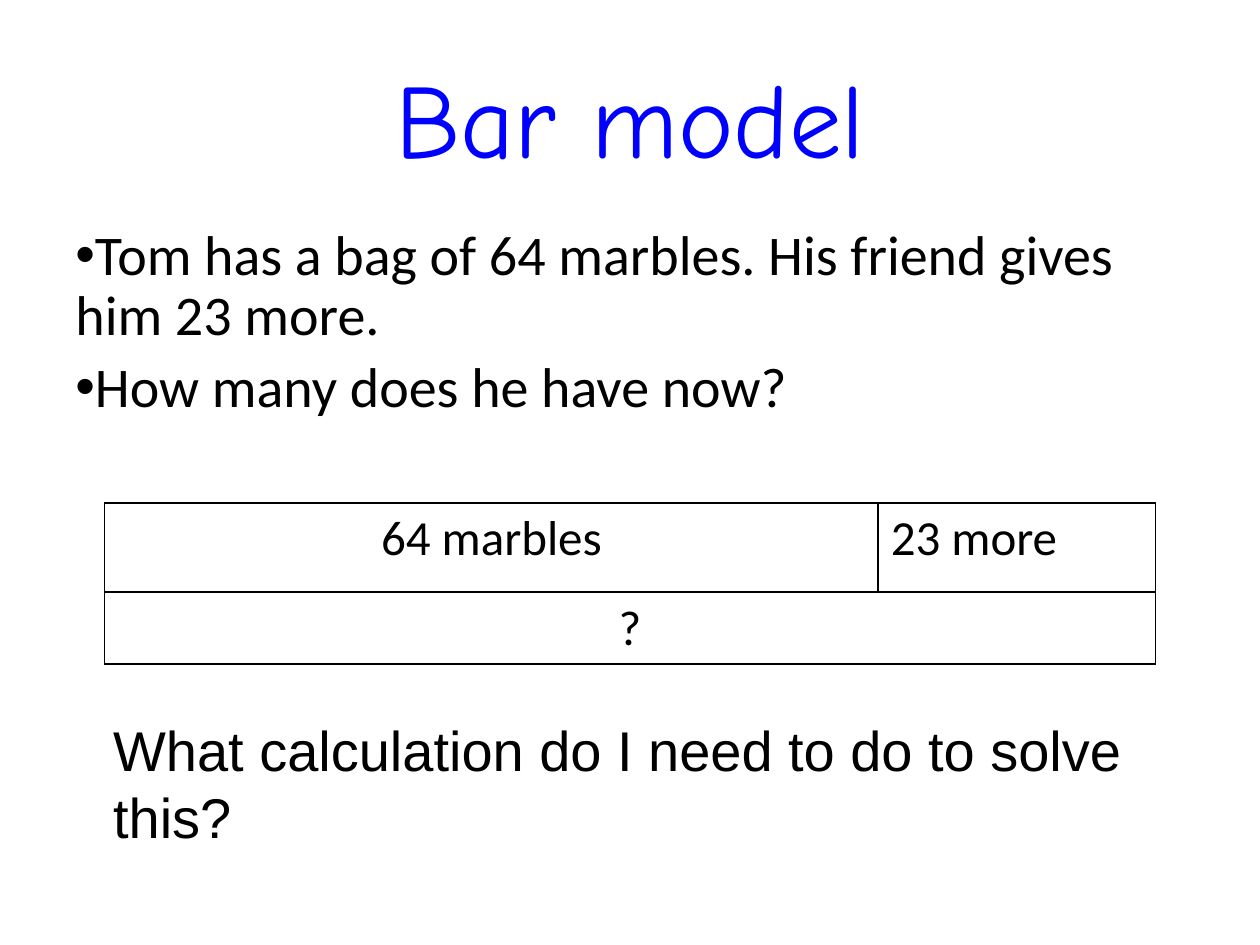
from dataclasses import dataclass

from lxml import etree
from pptx import Presentation
from pptx.dml.color import RGBColor
from pptx.enum.text import MSO_ANCHOR, PP_ALIGN
from pptx.oxml.ns import qn
from pptx.util import Inches, Pt

LEFT, CENTER = PP_ALIGN.LEFT, PP_ALIGN.CENTER
TOP, MIDDLE = MSO_ANCHOR.TOP, MSO_ANCHOR.MIDDLE


@dataclass(frozen=True)
class Theme:
    ink: str = "000000"
    blue: str = "0000FF"
    title: int = 60
    body: int = 32
    cell: int = 28
    line: int = 1
    head_font: str = "Comic Neue"
    body_font: str = "Calibri"
    note_font: str = "Arial"


class Deck:
    def __init__(self, slide, theme):
        self.slide = slide
        self.theme = theme

    def label(self, para, text, font, size, color=None, **form):
        for name, value in form.items():
            setattr(para, name, value)
        run = para.add_run()
        run.text = text
        for name, value in {"name": font, "size": Pt(size)}.items():
            setattr(run.font, name, value)
        run.font.color.rgb = RGBColor.from_string(color or self.theme.ink)

    def text(self, box, lines, font, size, color=None, anchor=TOP,
             bullet=False, **form):
        frame = self.slide.shapes.add_textbox(*map(Inches, box)).text_frame
        frame.word_wrap = True
        frame.vertical_anchor = anchor
        for i, line in enumerate(lines):
            para = frame.add_paragraph() if i else frame.paragraphs[0]
            self.label(para, line, font, size, color, **form)
            if bullet:
                self.bullet(para)

    def bullet(self, para):
        props = para._p.get_or_add_pPr()
        etree.SubElement(props, qn("a:buFont"), typeface="Arial")
        etree.SubElement(props, qn("a:buChar"), char="•")

    def border(self, cell):
        """Draw all four sides, placed ahead of the cell's fill."""
        props = cell._tc.get_or_add_tcPr()
        for i, side in enumerate("LRTB"):
            line = etree.Element(qn(f"a:ln{side}"),
                                 w=str(Pt(self.theme.line)))
            fill = etree.SubElement(line, qn("a:solidFill"))
            etree.SubElement(fill, qn("a:srgbClr"), val=self.theme.ink)
            props.insert(i, line)

    def bars(self, left, top, widths, heights, parts, whole):
        """Table with the parts in the first row and their total below."""
        theme = self.theme
        table = self.slide.shapes.add_table(
            len(heights), len(widths), Inches(left), Inches(top),
            Inches(sum(widths)), Inches(sum(heights))).table
        table.first_row = table.horz_banding = False
        for col, width in zip(table.columns, widths):
            col.width = Inches(width)
        for row, height in zip(table.rows, heights):
            row.height = Inches(height)
        table.cell(1, 0).merge(table.cell(1, len(widths) - 1))
        for cell in table.iter_cells():
            cell.fill.background()
            self.border(cell)
        items = [(table.cell(0, i), *part) for i, part in enumerate(parts)]
        items.append((table.cell(1, 0), whole, CENTER))
        for cell, text, align in items:
            self.label(cell.text_frame.paragraphs[0], text, theme.body_font,
                       theme.cell, alignment=align,
                       space_before=Pt(theme.cell * 0.2))


def main():
    show = Presentation()
    show.slide_width, show.slide_height = Inches(10), Inches(7.5)
    theme = Theme()
    deck = Deck(show.slides.add_slide(show.slide_layouts[6]), theme)

    deck.text((0.5, 0.3, 9, 1.25), ["Bar model"], theme.head_font,
              theme.title, theme.blue, MIDDLE, alignment=CENTER)
    deck.text((0.5, 1.75, 9, 1.76),
              ["Tom has a bag of 64 marbles. His friend gives him 23 more.",
               "How many does he have now?"],
              theme.body_font, theme.body, bullet=True,
              line_spacing=0.9, space_before=Pt(theme.body * 0.2))
    deck.bars(0.83, 3.99, [6.14, 2.2], [0.71, 0.57],
              [("64 marbles", CENTER), ("23 more", LEFT)], "?")
    deck.text((0.8, 5.63, 9.2, 0.63),
              ["What calculation do I need to do to solve this?"],
              theme.note_font, theme.body)
    show.save("out.pptx")


if __name__ == "__main__":
    main()
